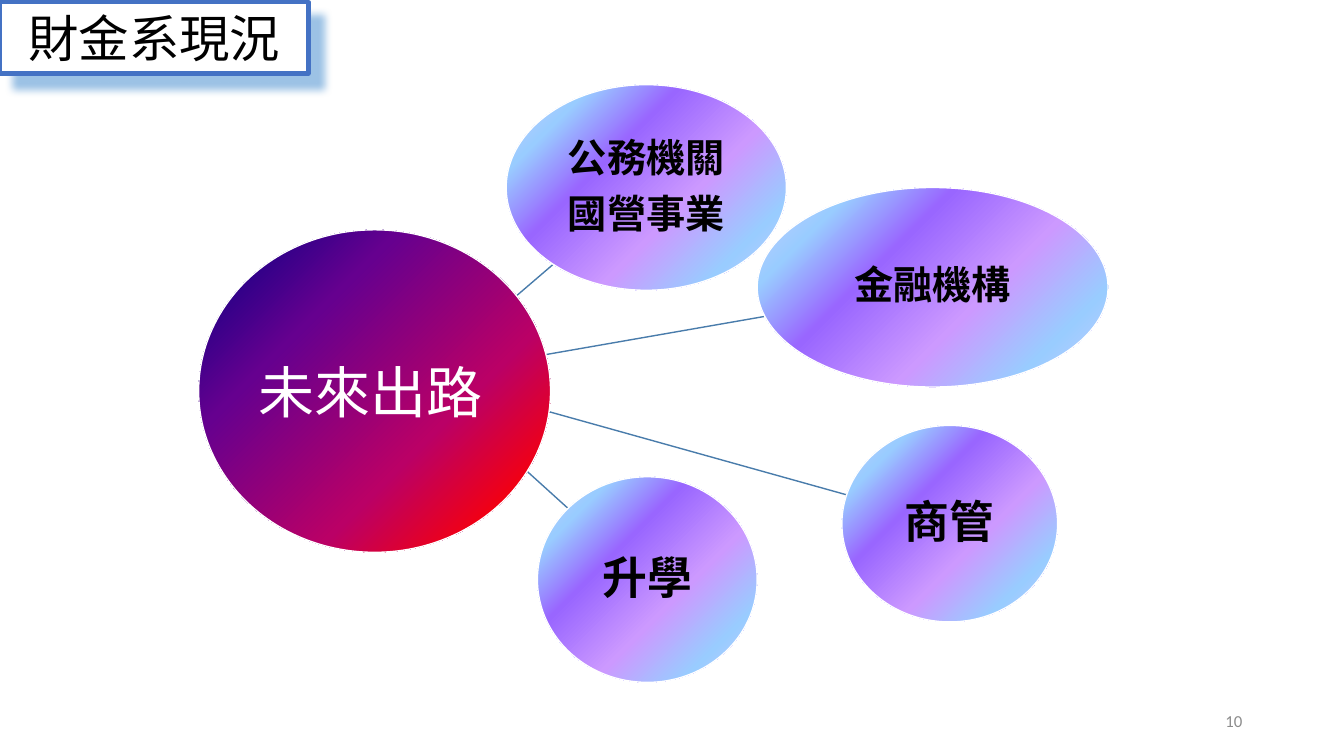
from lxml import etree
from pptx import Presentation
from pptx.dml.color import RGBColor
from pptx.enum.shapes import MSO_CONNECTOR, MSO_SHAPE
from pptx.enum.text import MSO_ANCHOR, PP_ALIGN
from pptx.oxml import parse_xml
from pptx.oxml.ns import nsdecls, qn
from pptx.util import Inches, Pt

OVAL, RECT = MSO_SHAPE.OVAL, MSO_SHAPE.RECTANGLE
STRAIGHT = MSO_CONNECTOR.STRAIGHT
MIDDLE = MSO_ANCHOR.MIDDLE
LEFT, CENTER, RIGHT = PP_ALIGN.LEFT, PP_ALIGN.CENTER, PP_ALIGN.RIGHT

BLACK = RGBColor(0x00, 0x00, 0x00)
WHITE = RGBColor(0xFF, 0xFF, 0xFF)
GRAY = RGBColor(0x8C, 0x8C, 0x8C)
BLUE = RGBColor(0x44, 0x72, 0xC4)
STEEL = RGBColor(0x49, 0x7C, 0xAB)
GLOW = RGBColor(0x9D, 0xC3, 0xE6)

CJK, LATIN = "Noto Sans CJK SC", "Calibri"
DUSK = [(0, "000082"), (30, "66008F"), (65, "BA0066"), (90, "FF0000"),
        (100, "FF8200")]
DAWN = [(0, "CCCCFF"), (18, "99CCFF"), (36, "9966FF"), (61, "CC99FF"),
        (82, "99CCFF"), (100, "CCCCFF")]

HUB = (1.97, 2.28, 3.49, 3.2)
PATHS = [  # box, lines of text, size, spoke start, spoke end
    ((5.02, 0.84, 2.78, 2.04), ["公務機關", "國營事業"], 28,
     (5, 3.04), (5.49, 2.62)),
    ((7.51, 1.86, 3.48, 1.98), ["金融機構"], 28, (5, 3.59), (7.58, 3.14)),
    ((8.35, 4.22, 2.14, 1.95), ["商管"], 32, (5, 3.96), (8.4, 4.91)),
    ((5.33, 4.73, 2.18, 2.04), ["升學"], 32, (5, 4.47), (5.63, 5.04)),
]


def inch(box):
    return [Inches(n) for n in box]


def style(run, color, **form):
    """Set the font of a run, for Latin and East Asian letters alike."""
    for key, value in form.items():
        setattr(run.font, key, value)
    run.font.color.rgb = color
    asian = etree.SubElement(run.font._element, qn("a:ea"))
    asian.set("typeface", CJK)


def frame(shape, inset=0.02):
    text = shape.text_frame
    form = {"word_wrap": True, "vertical_anchor": MIDDLE,
            "margin_left": Inches(inset), "margin_right": Inches(inset),
            "margin_top": Inches(0.02), "margin_bottom": Inches(0.02)}
    for key, value in form.items():
        setattr(text, key, value)
    return text


def label(slide, box, words, size, font, color, align):
    text = frame(slide.shapes.add_textbox(*inch(box)), 0.1)
    para = text.paragraphs[0]
    para.alignment = align
    run = para.add_run()
    run.text = words
    style(run, color, name=font, size=Pt(size))


def blend(slide, box, stops):
    """Add an oval with a diagonal gradient."""
    oval = slide.shapes.add_shape(OVAL, *inch(box))
    oval.shadow.inherit = False
    marks = "".join(f'<a:gs pos="{spot * 1000}"><a:srgbClr val="{tint}"/></a:gs>'
                    for spot, tint in stops)
    fill = parse_xml(f'<a:gradFill {nsdecls("a")} rotWithShape="1"><a:gsLst>'
                     f'{marks}</a:gsLst><a:lin ang="2700000" scaled="0"/>'
                     '</a:gradFill>')
    oval._element.spPr.find(qn("a:prstGeom")).addnext(fill)
    oval.line.color.rgb = WHITE
    oval.line.width = Pt(1)
    return oval


def spoke(slide, start, end):
    line = slide.shapes.add_connector(STRAIGHT, *inch(start + end))
    line.line.color.rgb = STEEL
    line.line.width = Pt(1)
    etree.SubElement(line._element.spPr, qn("a:effectLst"))


def bubble(slide, box, lines, size):
    text = frame(blend(slide, box, DAWN))
    for i, words in enumerate(lines):
        para = text.add_paragraph() if i else text.paragraphs[0]
        para.alignment = CENTER
        para.line_spacing = 0.9
        after = etree.SubElement(para._p.get_or_add_pPr(), qn("a:spcAft"))
        etree.SubElement(after, qn("a:spcPct")).set("val", "35000")
        run = para.add_run()
        run.text = words
        style(run, BLACK, name=CJK, size=Pt(size), bold=True)


def title(slide, box):
    card = slide.shapes.add_shape(RECT, *inch(box))
    card.fill.solid()
    card.fill.fore_color.rgb = WHITE
    card.line.color.rgb = BLUE
    card.line.width = Pt(3)
    card.shadow.inherit = False
    card._element.spPr.find(qn("a:effectLst")).append(parse_xml(
        f'<a:outerShdw {nsdecls("a")} blurRad="{Inches(0.08)}" '
        f'dist="{Inches(0.2)}" dir="2700000" algn="tl" rotWithShape="0">'
        f'<a:srgbClr val="{GLOW}"/></a:outerShdw>'))
    para = frame(card, 0.1).paragraphs[0]
    para.alignment = CENTER
    for words, font in (("財金系", LATIN), ("現況", CJK)):
        run = para.add_run()
        run.text = words
        style(run, BLACK, name=font, size=Pt(36))


def radial(slide, hub):
    """Place the hub, its spokes and the bubbles around it."""
    for _, _, _, start, end in PATHS:
        spoke(slide, start, end)
    blend(slide, hub, DUSK)
    for box, lines, size, _, _ in PATHS:
        bubble(slide, box, lines, size)
    left, top, _, high = hub
    label(slide, (left + 0.5, top + high / 2 - 0.39, 2.46, 0.77), "未來出路",
          40, CJK, WHITE, LEFT)


def main():
    deck = Presentation()
    deck.slide_width, deck.slide_height = Inches(13.33), Inches(7.5)
    slide = deck.slides.add_slide(deck.slide_layouts[6])
    radial(slide, HUB)
    label(slide, (9.42, 6.95, 3, 0.4), "10", 12, LATIN, GRAY, RIGHT)
    title(slide, (0, 0.02, 3.06, 0.71))
    deck.save("out.pptx")


if __name__ == "__main__":
    main()
